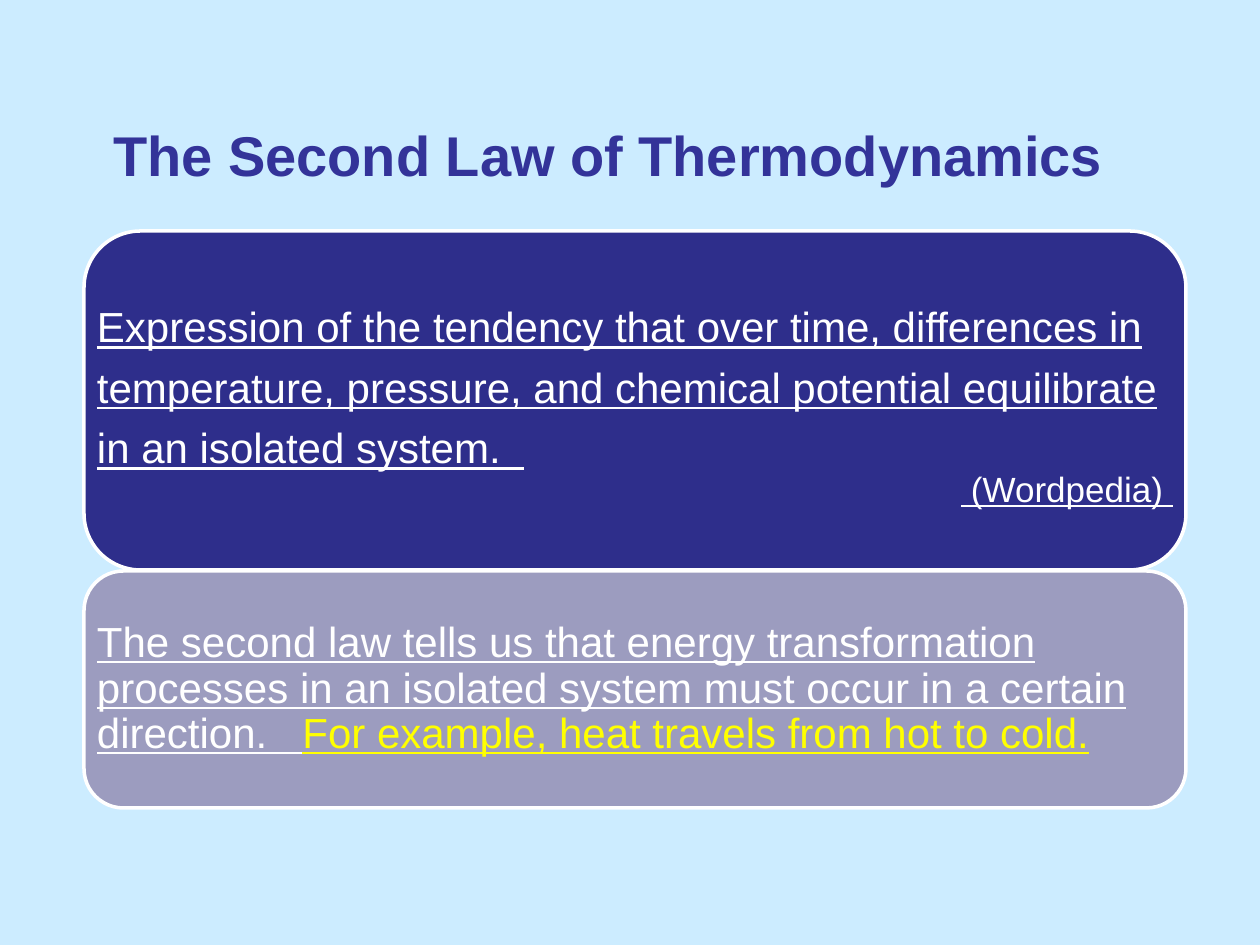
from pptx import Presentation
from pptx.dml import color
from pptx.enum import shapes, text
from pptx.util import Pt

SCALE = 914400 / 126
WHITE = "FFFFFF"
LEFT, WIDTH = 84, 1102


def px(*sizes):
    return [round(size * SCALE) for size in sizes]


def paint(target, shade):
    target.rgb = color.RGBColor.from_string(shade)


def fill(target, shade):
    target.solid()
    paint(target.fore_color, shade)


class Board:
    font = "Arial"
    inset = 13

    def __init__(self, deck, back):
        self.slide = deck.slides.add_slide(deck.slide_layouts[5])
        fill(self.slide.background.fill, back)

    def style(self, par, size, shade, align):
        par.alignment = align
        par.font.name = self.font
        par.font.size = Pt(size)
        paint(par.font.color, shade)

    def title(self, words, box, size, shade):
        holder = self.slide.shapes.title
        holder.left, holder.top, holder.width, holder.height = px(*box)
        frame = holder.text_frame
        frame.word_wrap = True
        frame.vertical_anchor = text.MSO_ANCHOR.MIDDLE
        frame.text = words
        par = frame.paragraphs[0]
        self.style(par, size, shade, text.PP_ALIGN.CENTER)
        par.font.bold = True

    def panel(self, box, shade):
        panel = self.slide.shapes.add_shape(
            shapes.MSO_SHAPE.ROUNDED_RECTANGLE, *px(*box))
        panel.shadow.inherit = False
        fill(panel.fill, shade)
        fill(panel.line.fill, WHITE)
        panel.line.width = Pt(2)

    def words(self, box, pars):
        frame = self.slide.shapes.add_textbox(*px(*box)).text_frame
        frame.word_wrap = True
        frame.vertical_anchor = text.MSO_ANCHOR.MIDDLE
        (frame.margin_left, frame.margin_top,
         frame.margin_right, frame.margin_bottom) = px(*[self.inset] * 4)
        for i, (runs, size, align, space) in enumerate(pars):
            par = frame.add_paragraph() if i else frame.paragraphs[0]
            self.style(par, size, WHITE, align)
            par.font.underline = True
            par.line_spacing = space
            for words, shade in runs:
                run = par.add_run()
                run.text = words
                if shade != WHITE:
                    paint(run.font.color, shade)


def main():
    deck = Presentation()
    deck.slide_width, deck.slide_height = px(1260, 945)
    board = Board(deck, "CCECFF")
    board.title("The Second Law of Thermodynamics", (73, 53, 1071, 203), 32, "333399")

    left, right = text.PP_ALIGN.LEFT, text.PP_ALIGN.RIGHT
    law = [
        ([("Expression of the tendency that over time, differences in temperature, "
           "pressure, and chemical potential equilibrate in an isolated system.  ",
           WHITE)], 24, left, 1.2),
        ([(" (Wordpedia) ", WHITE)], 20, right, 0.9),
    ]
    course = [
        ([("The second law tells us that energy transformation processes in an "
           "isolated system must occur in a certain direction.   ", WHITE),
          ("For example, heat travels from hot to cold.", "FFFF00")], 24, left, 0.9),
    ]
    for top, height, shade, pars in ((231, 339, "2E2E8B", law),
                                     (571, 237, "9C9CBF", course)):
        box = (LEFT, top, WIDTH, height)
        board.panel(box, shade)
        board.words(box, pars)

    deck.save("out.pptx")


if __name__ == "__main__":
    main()
